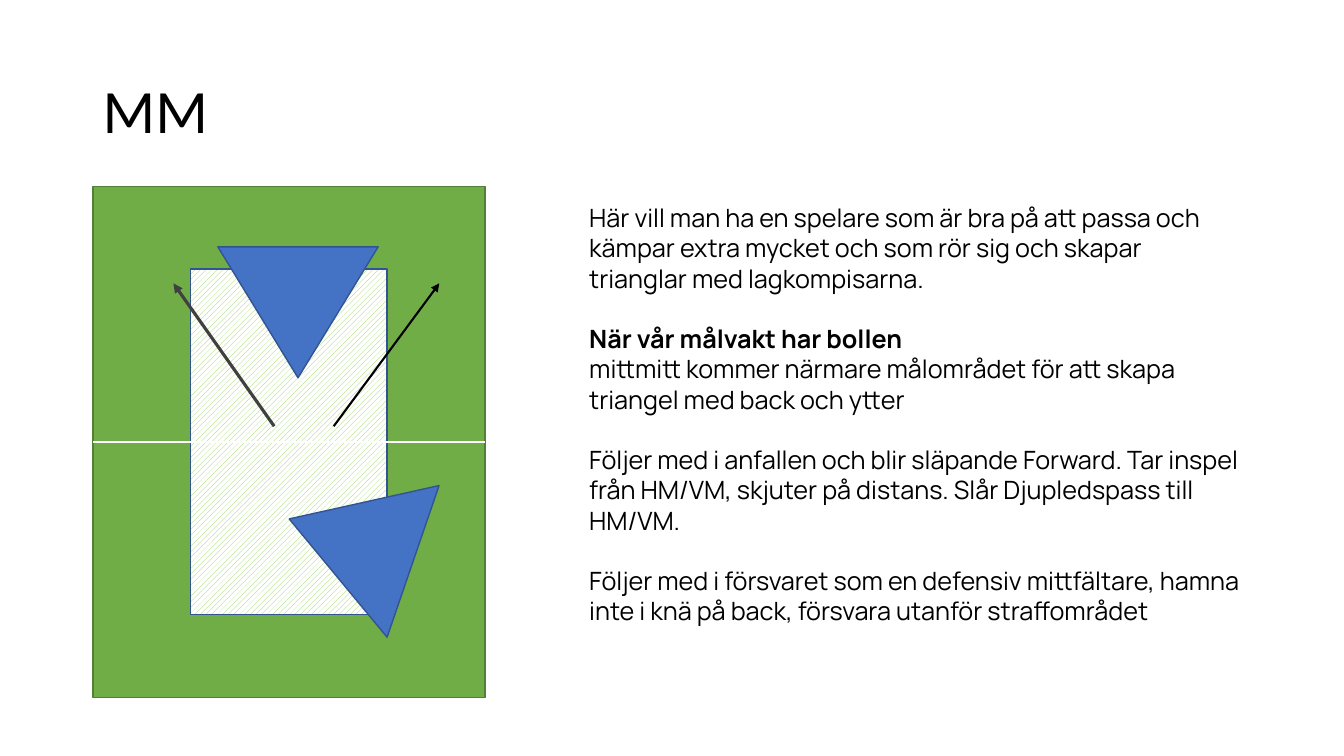
from lxml.etree import SubElement
from pptx import Presentation
from pptx.dml.color import RGBColor
from pptx.enum.dml import MSO_PATTERN
from pptx.enum.shapes import MSO_CONNECTOR, MSO_SHAPE
from pptx.enum.text import MSO_ANCHOR, MSO_AUTO_SIZE
from pptx.oxml.ns import qn
from pptx.util import Cm, Pt

COLORS = {
    "text": "000000", "white": "FFFFFF", "grass": "70AD47", "grass_edge": "538035",
    "stripe": "92D050", "blue": "4472C4", "blue_edge": "325491", "gray": "404040",
}
TITLE = "MM"
BODY = [
    ("Här vill man ha en spelare som är bra på att passa och kämpar extra mycket "
     "och som rör sig och skapar trianglar med lagkompisarna.", False, 0),
    ("När vår målvakt har bollen", True, 21.6),
    ("mittmitt kommer närmare målområdet för att skapa triangel med back och ytter", False, 0),
    ("Följer med i anfallen och blir släpande Forward. Tar inspel från HM/VM, "
     "skjuter på distans. Slår Djupledspass till HM/VM.", False, 21.6),
    ("Följer med i försvaret som en defensiv mittfältare, hamna inte i knä på back, "
     "försvara utanför straffområdet", False, 21.6),
]
TITLE_BOX = (2.34, 1.02, 29.21, 3.68)
BODY_BOX = (14.6, 4.98, 16.94, 12.57)
PITCH = (2.34, 4.7, 9.88, 12.88)
ZONE = (4.8, 6.78, 4.95, 8.71)
TRIANGLE_SIZE = (4.04, 3.3)
TRIANGLES = [(6.83, 11.96, 288.9), (5.49, 6.22, 180)]
ARROW_BOTTOM, ARROW_TOP = 10.74, 7.14
ARROWS = [(8.41, 11.07, "text", 1.5), (6.91, 4.37, "gray", 2.25)]


def rgb(name):
    return RGBColor.from_string(COLORS[name])


def set_all(obj, formats):
    for name, value in formats.items():
        setattr(obj, name, value)


def add_shape(s, kind, box, edge, fill=None, rotation=0):
    sp = s.shapes.add_shape(kind, *map(Cm, box))
    sp.shadow.inherit = False
    sp.rotation = rotation
    if fill:
        sp.fill.solid()
        sp.fill.fore_color.rgb = rgb(fill)
    sp.line.color.rgb = rgb(edge)
    sp.line.width = Pt(1)
    return sp


def add_line(s, ends, color, width, arrow=False):
    line = s.shapes.add_connector(MSO_CONNECTOR.STRAIGHT, *map(Cm, ends))
    line.line.color.rgb = rgb(color)
    line.line.width = Pt(width)
    if arrow:
        SubElement(line.line._get_or_add_ln(), qn("a:tailEnd"), type="triangle")
    SubElement(line._element.spPr, qn("a:effectLst"))
    return line


def add_text(s, box, paragraphs, font, size, frame, spacing):
    tf = s.shapes.add_textbox(*map(Cm, box)).text_frame
    set_all(tf, {"word_wrap": True, **frame})
    for i, (text, bold, before) in enumerate(paragraphs):
        p = tf.add_paragraph() if i else tf.paragraphs[0]
        set_all(p, {"space_before": Pt(before), "line_spacing": spacing})
        r = p.add_run()
        r.text = text
        set_all(r.font, {"name": font, "size": Pt(size), "bold": bold})
        r.font.color.rgb = rgb("text")


def main():
    prs = Presentation()
    set_all(prs, {"slide_width": Cm(33.87), "slide_height": Cm(19.05)})
    s = prs.slides.add_slide(prs.slide_layouts[6])

    add_text(s, TITLE_BOX, [(TITLE, False, 0)], "Calibri", 44,
             {"vertical_anchor": MSO_ANCHOR.MIDDLE, "auto_size": MSO_AUTO_SIZE.NONE}, 0.9)

    pitch = add_shape(s, MSO_SHAPE.RECTANGLE, PITCH, "grass_edge", "grass")
    zone = add_shape(s, MSO_SHAPE.RECTANGLE, ZONE, "blue_edge")
    zone.fill.patterned()
    zone.fill.pattern = MSO_PATTERN.WIDE_UPWARD_DIAGONAL
    zone.fill.fore_color.rgb = rgb("stripe")
    zone.fill.back_color.rgb = rgb("white")

    left, top, width, height = PITCH
    middle = top + height / 2
    halfway = add_line(s, (left, middle, left + width, middle), "white", 1.5)
    halfway.begin_connect(pitch, 1)
    halfway.end_connect(pitch, 3)

    add_text(s, BODY_BOX, BODY, "Manrope", 18,
             {"vertical_anchor": MSO_ANCHOR.TOP,
              "auto_size": MSO_AUTO_SIZE.SHAPE_TO_FIT_TEXT}, 1.0)

    for x, y, rotation in TRIANGLES:
        add_shape(s, MSO_SHAPE.ISOSCELES_TRIANGLE, (x, y, *TRIANGLE_SIZE),
                  "blue_edge", "blue", rotation)
    for start, end, color, weight in ARROWS:
        add_line(s, (start, ARROW_BOTTOM, end, ARROW_TOP), color, weight, arrow=True)

    prs.save("out.pptx")


if __name__ == "__main__":
    main()
